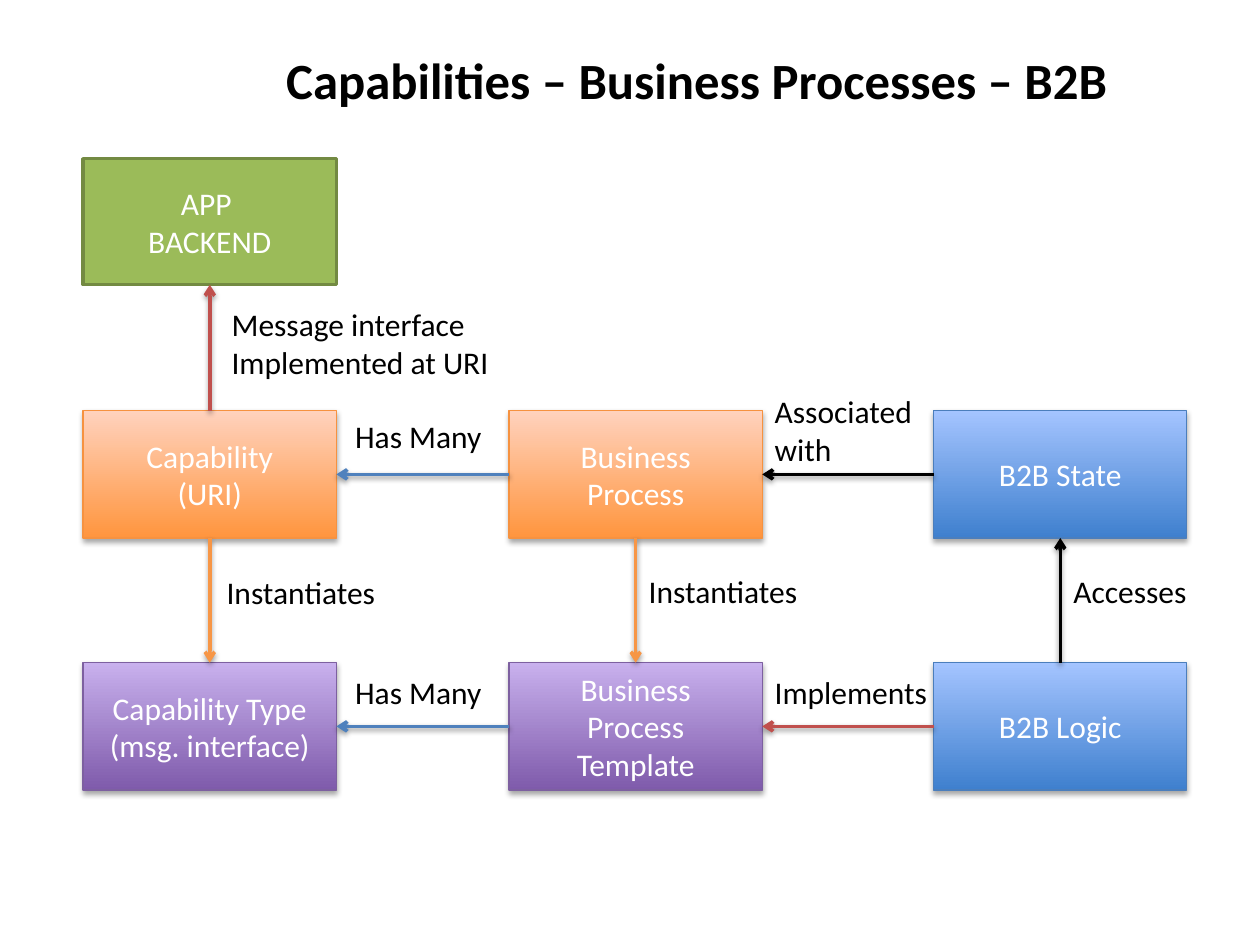
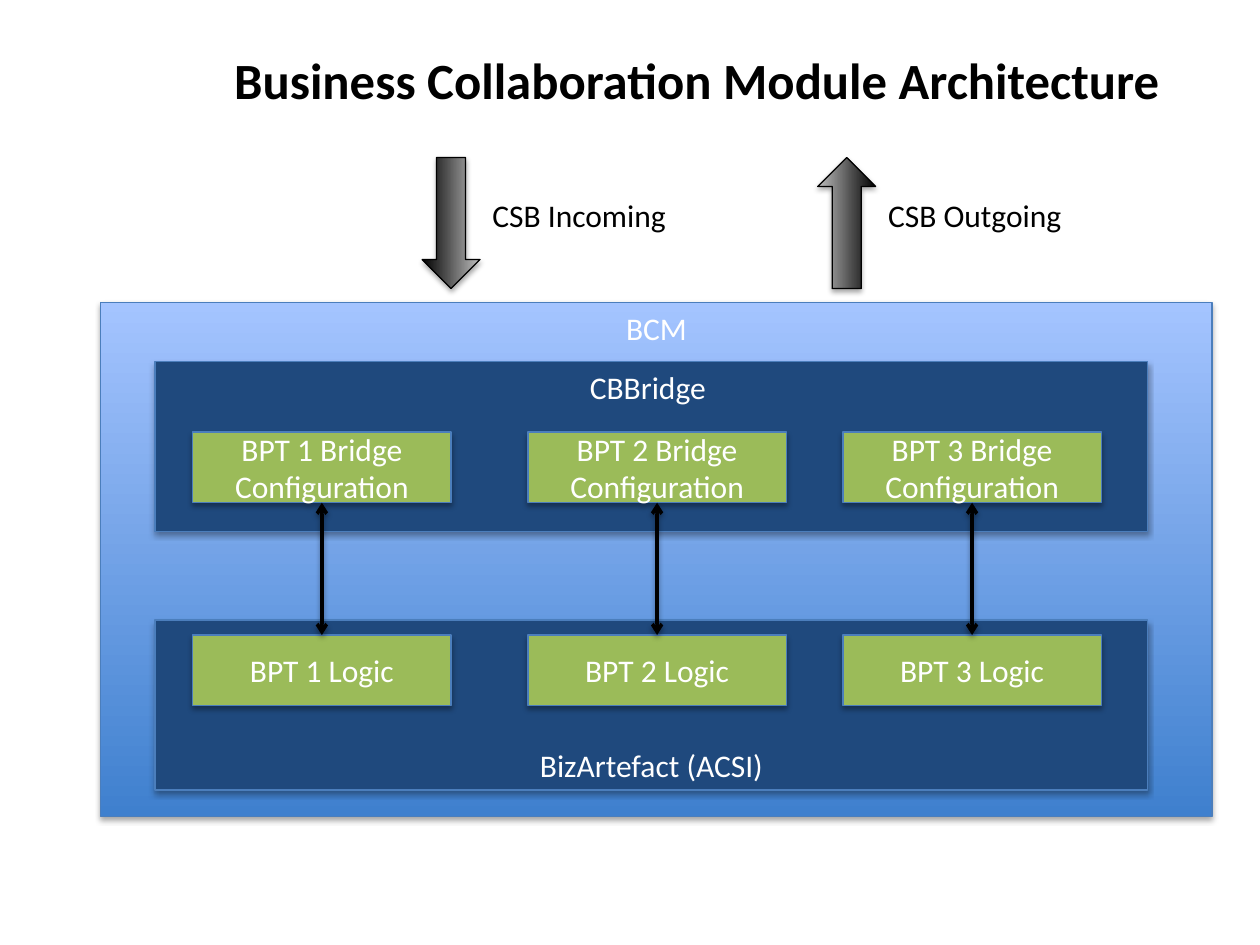
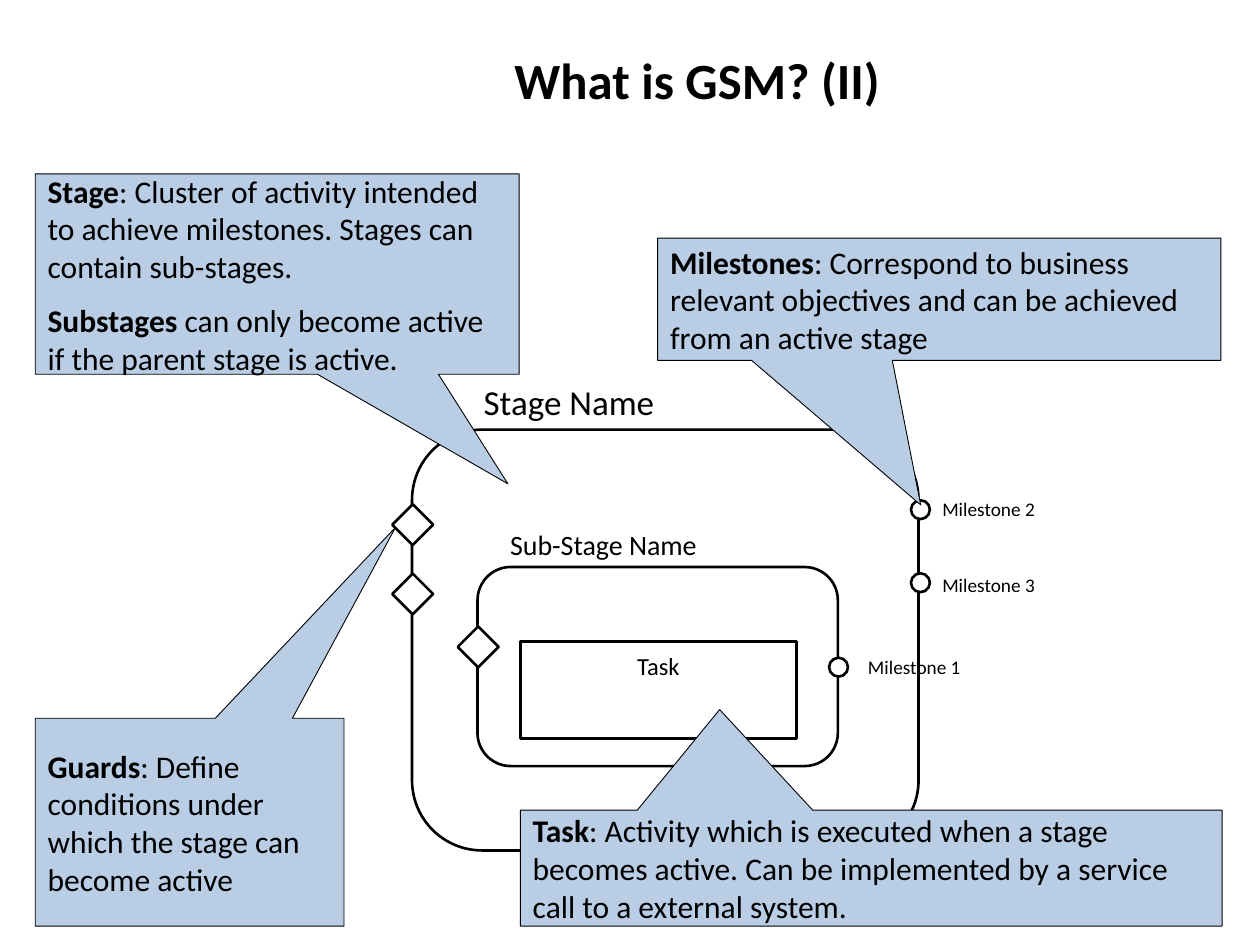
from lxml.etree import SubElement
from pptx import Presentation
from pptx.dml.color import RGBColor
from pptx.enum.shapes import MSO_CONNECTOR, MSO_SHAPE as SHAPE
from pptx.enum.text import MSO_ANCHOR as ANCHOR, MSO_AUTO_SIZE as AUTO, PP_ALIGN as ALIGN
from pptx.oxml.ns import qn
from pptx.util import Inches, Pt

BLACK = RGBColor(0x00, 0x00, 0x00)
WHITE = RGBColor(0xFF, 0xFF, 0xFF)
GREY = RGBColor(0xBD, 0xBD, 0xBD)
RED = RGBColor(0xC0, 0x50, 0x4D)
BLUE = RGBColor(0x4F, 0x81, 0xBD)
ORANGE = RGBColor(0xF7, 0x96, 0x46)
NAVY = RGBColor(0x1F, 0x49, 0x7D)
GREEN = RGBColor(0x9B, 0xBB, 0x59)
GREEN_EDGE = RGBColor(0x73, 0x8A, 0x42)
BLUE_EDGE = RGBColor(0x4B, 0x7E, 0xBC)
ORANGE_EDGE = RGBColor(0xF6, 0x92, 0x40)
PURPLE_EDGE = RGBColor(0x7D, 0x60, 0xA0)
PALE_BLUE = RGBColor(0xB9, 0xCD, 0xE5)
BLUE_FADE = (RGBColor(0x3F, 0x80, 0xCE), RGBColor(0xA4, 0xC4, 0xFF))
ORANGE_FADE = (RGBColor(0xFF, 0x95, 0x3E), RGBColor(0xFF, 0xD2, 0xBD))
PURPLE_FADE = (RGBColor(0x7F, 0x5B, 0xAB), RGBColor(0xC8, 0xB0, 0xED))
BLACK_FADE = (BLACK, GREY)

TITLE_BOX = (1.74, 0.27, 7.59, 0.72)
TITLE_FONT = dict(name="Calibri", size=Pt(29), bold=True)
TIGHT = dict(margin_top=Inches(0.08), margin_bottom=Inches(0.08))
TOP, LEFT, BOTTOM, RIGHT = range(4)


def set_all(obj, values):
    """Set every attribute in a dict of format values."""
    for name, value in values.items():
        setattr(obj, name, value)


def inches(box):
    """Turn a tuple of numbers into lengths."""
    return [Inches(v) for v in box]


def write(tf, paras, size=18, color=BLACK, align=ALIGN.LEFT, **frame):
    """Write paragraphs; a tuple holds a bold lead and its plain rest."""
    set_all(tf, dict(word_wrap=True, vertical_anchor=ANCHOR.TOP) | frame)
    for i, para in enumerate(paras):
        p = tf.paragraphs[0] if i == 0 else tf.add_paragraph()
        p.alignment = align
        parts = para if isinstance(para, tuple) else (para,)
        for j, text in enumerate(parts):
            r = p.add_run()
            r.text = text
            set_all(r.font, dict(name="Calibri", size=Pt(size), bold=j == 0 and len(parts) > 1))
            r.font.color.rgb = color


def add_shadow(sp, dist, alpha):
    """Give a shape or connector a soft shadow straight below."""
    spPr = sp.element.spPr
    effects = spPr.find(qn("a:effectLst"))
    if effects is None:
        effects = SubElement(spPr, qn("a:effectLst"))
    shade = SubElement(effects, qn("a:outerShdw"), blurRad=str(Pt(3.1)), dist=str(Pt(dist)),
                       dir="5400000", rotWithShape="0")
    tone = SubElement(shade, qn("a:srgbClr"), val="000000")
    SubElement(tone, qn("a:alpha"), val=str(alpha * 1000))


def add_box(s, kind, box, fill=None, edge=BLACK, width=0.75, shadow=False, rotation=0):
    """Add a preset shape with a plain, faded or empty fill."""
    sp = s.shapes.add_shape(kind, *inches(box))
    sp.rotation = rotation
    sp.shadow.inherit = False
    if fill is None:
        sp.fill.background()
    elif isinstance(fill, RGBColor):
        sp.fill.solid()
        sp.fill.fore_color.rgb = fill
    else:
        sp.fill.gradient()
        sp.fill.gradient_angle = 90
        for stop, color in zip(sp.fill.gradient_stops, fill):
            stop.color.rgb = color
    sp.line.color.rgb = edge
    sp.line.width = Pt(width)
    if shadow:
        add_shadow(sp, 1.8, 35)
    return sp


def add_block(s, box, paras, fill, edge=BLUE_EDGE, anchor=ANCHOR.MIDDLE, width=0.75, shadow=True):
    """Add a rectangle with centred white text."""
    sp = add_box(s, SHAPE.RECTANGLE, box, fill, edge, width, shadow)
    write(sp.text_frame, paras, color=WHITE, align=ALIGN.CENTER, vertical_anchor=anchor)
    return sp


def add_label(s, box, paras, size=18, **frame):
    """Add a text box."""
    tb = s.shapes.add_textbox(*inches(box))
    write(tb.text_frame, paras, size, **frame)


def add_tag(s, box, *paras):
    """Add an unwrapped label that fits its text."""
    add_label(s, box, paras, word_wrap=False, auto_size=AUTO.SHAPE_TO_FIT_TEXT)


def add_link(s, start, start_side, end, end_side, color, ends=("tailEnd",)):
    """Join two shapes with an arrow."""
    cn = s.shapes.add_connector(MSO_CONNECTOR.STRAIGHT, 0, 0, 0, 0)
    cn.begin_connect(start, start_side)
    cn.end_connect(end, end_side)
    cn.line.color.rgb = color
    cn.line.width = Pt(2)
    ln = cn.element.spPr.find(qn("a:ln"))
    for end_name in ends:
        SubElement(ln, qn(f"a:{end_name}"), type="arrow")
    add_shadow(cn, 1.6, 38)


def add_callout(s, box, tip, *paras):
    """Add a pale callout whose tip is given relative to its centre."""
    sp = add_box(s, SHAPE.RECTANGULAR_CALLOUT, box, PALE_BLUE, width=0.5)
    sp.adjustments[0], sp.adjustments[1] = tip
    write(sp.text_frame, paras, vertical_anchor=ANCHOR.MIDDLE, **TIGHT)
    for p in sp.text_frame.paragraphs[1:]:
        p.space_before = Pt(9)


def add_slide(prs, title):
    """Add a slide with the shared title style."""
    s = prs.slides.add_slide(prs.slide_layouts[5])
    t = s.shapes.title
    set_all(t, dict(zip(("left", "top", "width", "height"), inches(TITLE_BOX))))
    t.text_frame.text = title
    set_all(t.text_frame, dict(vertical_anchor=ANCHOR.MIDDLE, auto_size=AUTO.NONE))
    p = t.text_frame.paragraphs[0]
    p.alignment = ALIGN.CENTER
    set_all(p.runs[0].font, TITLE_FONT)
    p.runs[0].font.color.rgb = BLACK
    return s


def capabilities_slide(prs):
    """Build the map of capabilities, processes and B2B parts."""
    s = add_slide(prs, "Capabilities – Business Processes – B2B")
    xs, (upper, lower), size = (0.66, 4.04, 7.41), (3.26, 5.26), (2.01, 1.01)
    orange, purple, blue = ((ORANGE_FADE, ORANGE_EDGE), (PURPLE_FADE, PURPLE_EDGE),
                            (BLUE_FADE, BLUE_EDGE))
    capability, process, state, cap_type, template, logic = [
        add_block(s, (x, y, *size), paras, *look) for x, y, paras, look in (
            (xs[0], upper, ["Capability", "(URI)"], orange),
            (xs[1], upper, ["Business", "Process"], orange),
            (xs[2], upper, ["B2B State"], blue),
            (xs[0], lower, ["Capability Type", "(msg. interface)"], purple),
            (xs[1], lower, ["Business", "Process", "Template"], purple),
            (xs[2], lower, ["B2B Logic"], blue))]
    backend = add_block(s, (xs[0], 1.26, 2.01, 1), ["APP ", "BACKEND"], GREEN, GREEN_EDGE,
                        width=2, shadow=False)
    for link in ((process, BOTTOM, template, TOP, ORANGE),
                 (capability, BOTTOM, cap_type, TOP, ORANGE),
                 (logic, TOP, state, BOTTOM, BLACK),
                 (process, LEFT, capability, RIGHT, BLUE),
                 (template, LEFT, cap_type, RIGHT, BLUE),
                 (state, LEFT, process, RIGHT, BLACK),
                 (logic, LEFT, template, RIGHT, RED),
                 (capability, TOP, backend, BOTTOM, RED)):
        add_link(s, *link)
    for tag in (((6.05, 5.29, 1.43, 0.4), "Implements"),
                ((5.05, 4.49, 1.41, 0.4), "Instantiates"),
                ((1.7, 4.5, 1.41, 0.4), "Instantiates"),
                ((8.42, 4.49, 1.11, 0.4), "Accesses"),
                ((6.05, 3.06, 1.31, 0.71), "Associated", "with"),
                ((2.72, 3.26, 1.22, 0.4), "Has Many"),
                ((2.72, 5.29, 1.22, 0.4), "Has Many"),
                ((1.74, 2.37, 2.27, 0.71), "Message interface", "Implemented at URI")):
        add_tag(s, *tag)


def architecture_slide(prs):
    """Build the layered module with its bridges and logic."""
    s = add_slide(prs, "Business Collaboration Module Architecture")
    add_block(s, (0.8, 2.4, 8.82, 4.08), ["BCM"], BLUE_FADE, anchor=ANCHOR.TOP)
    add_block(s, (1.23, 4.92, 7.88, 1.35), ["BizArtefact (ACSI)"], NAVY, anchor=ANCHOR.BOTTOM)
    add_block(s, (1.23, 2.87, 7.88, 1.35), ["CBBridge "], NAVY, anchor=ANCHOR.TOP)
    for x, turn, text in ((3.06, 90, "CSB Incoming"), (6.2, 270, "CSB Outgoing")):
        add_box(s, SHAPE.RIGHT_ARROW, (x, 1.54, 1.04, 0.46), BLACK_FADE, shadow=True, rotation=turn)
        add_tag(s, (x + 0.75, 1.51, 1.59, 0.4), text)
    for n, x in enumerate((1.53, 4.19, 6.69), 1):
        bridge = add_block(s, (x, 3.43, 2.05, 0.56), [f"BPT {n} Bridge Configuration"], GREEN)
        logic = add_block(s, (x, 5.04, 2.05, 0.56), [f"BPT {n} Logic"], GREEN)
        add_link(s, bridge, BOTTOM, logic, TOP, BLACK, ("headEnd", "tailEnd"))


def gsm_slide(prs):
    """Build the annotated stage diagram."""
    s = add_slide(prs, "What is GSM? (II)")
    for stage in ((3.27, 3.41, 4.02, 3.34), (3.79, 4.5, 2.86, 1.58)):
        add_box(s, SHAPE.ROUNDED_RECTANGLE, stage, width=1.5)
    task = add_box(s, SHAPE.RECTANGLE, (4.13, 5.09, 2.19, 0.77), width=1.5)
    write(task.text_frame, ["Task"], 14, align=ALIGN.CENTER, **TIGHT)
    for x, y in ((3.16, 4.05), (3.16, 4.6), (3.68, 5.02)):
        add_box(s, SHAPE.RECTANGLE, (x, y, 0.23, 0.23), WHITE, width=1.5, rotation=45)
    for x, y, label, text in ((7.23, 3.97, (7.38, 3.89, 0.99, 0.3), "Milestone 2"),
                              (7.23, 4.55, (7.38, 4.34, 0.99, 0.61), "Milestone 3"),
                              (6.58, 5.22, (6.79, 4.99, 0.99, 0.61), "Milestone 1")):
        add_box(s, SHAPE.OVAL, (x, y, 0.15, 0.15), WHITE, width=1.5)
        add_label(s, label, [text], 11, vertical_anchor=ANCHOR.MIDDLE, **TIGHT)
    add_label(s, (3.74, 2.97, 2.2, 0.44), ["Stage Name"], 20)
    add_label(s, (3.95, 4.14, 2.52, 0.37), ["Sub-Stage Name"], 16)
    add_callout(s, (0.28, 1.38, 3.84, 1.59), (0.477, 1.047),
                ("Stage", ": Cluster of activity intended to achieve milestones. "
                          "Stages can contain sub-stages."),
                ("Substages", " can only become active if the parent stage is active."))
    add_callout(s, (0.28, 5.7, 2.45, 1.65), (0.667, -1.418),
                ("Guards", ": Define conditions under which the stage can become active"))
    add_callout(s, (5.22, 1.89, 4.47, 0.97), (-0.033, 1.683),
                ("Milestones", ": Correspond to business relevant objectives "
                               "and can be achieved from an active stage"))
    add_callout(s, (4.13, 6.43, 5.57, 0.92), (-0.216, -1.368),
                ("Task", ": Activity which is executed when a stage becomes active. "
                         "Can be implemented by a service call to a external system."))


def main():
    """Build and save the presentation."""
    prs = Presentation()
    prs.slide_width, prs.slide_height = Inches(10), Inches(7.5)
    capabilities_slide(prs)
    architecture_slide(prs)
    gsm_slide(prs)
    prs.save("out.pptx")


if __name__ == "__main__":
    main()
